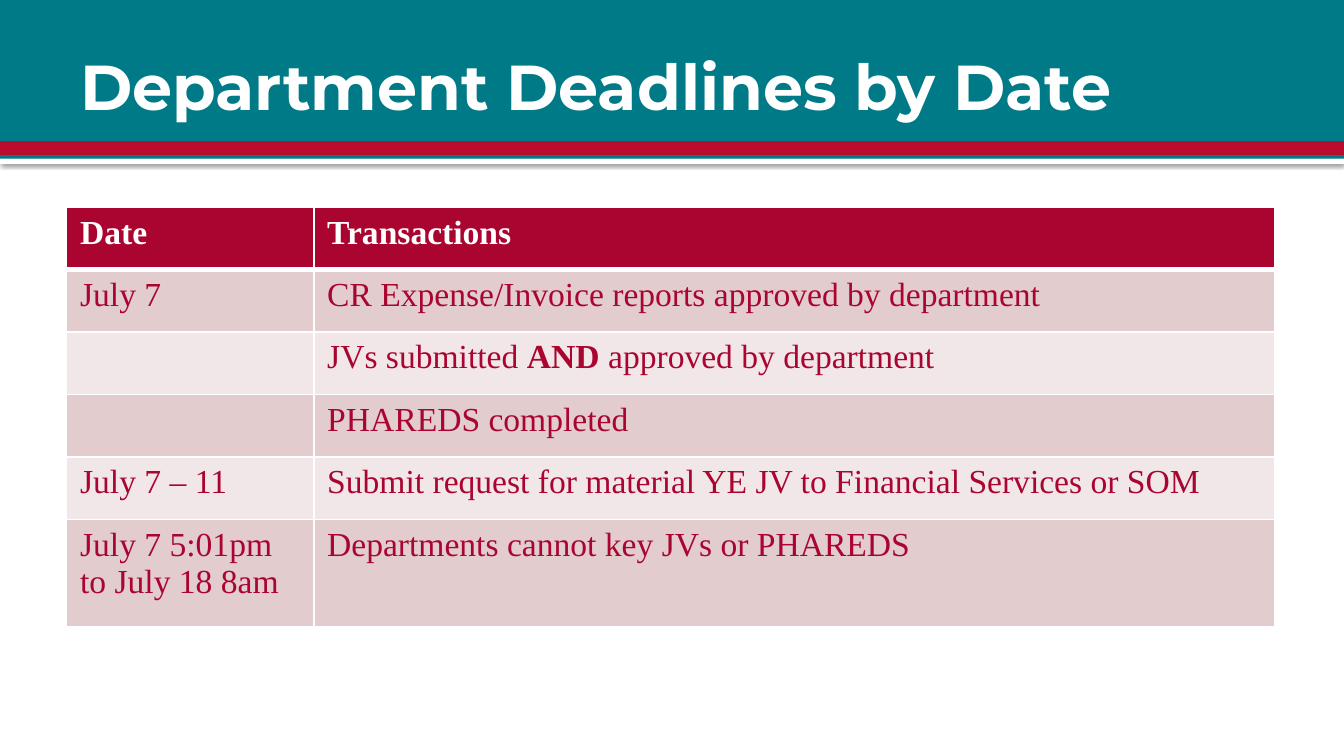
from typing import NamedTuple

from lxml.etree import SubElement
from pptx import Presentation
from pptx.dml.color import RGBColor
from pptx.enum.shapes import MSO_SHAPE as Shape
from pptx.enum.text import MSO_ANCHOR as Anchor, PP_ALIGN as Align
from pptx.oxml import parse_xml
from pptx.oxml.ns import nsdecls, qn
from pptx.util import Cm, Pt

TEAL, RED, CRIMSON, WHITE = "007A86", "BA0C2F", "AA0530", "FFFFFF"
DARK_BAND, LIGHT_BAND = "E2CCCD", "F1E7E8"
SLIDE_WIDTH, SLIDE_HEIGHT = 25.4, 14.29
COLUMN_WIDTHS = (4.67, 18.17)
ROW_HEIGHT, LAST_ROW_HEIGHT = 1.18, 2.03


class Band(NamedTuple):
    top: float
    height: float
    fill: str
    line: str | None = None
    shadow: bool = False


class Deadline(NamedTuple):
    date: str
    before: str
    bold: str = ""
    after: str = ""


BANDS = (
    Band(3.0, 0.1, WHITE, shadow=True),
    Band(0, 3.0, TEAL),
    Band(2.74, 0.13, TEAL, line=RED),
)
DEADLINES = (
    Deadline("July 7", "CR Expense/Invoice reports approved by department"),
    Deadline("", "JVs submitted ", "AND ", "approved by department"),
    Deadline("", "PHAREDS completed"),
    Deadline("July 7 – 11", "Submit request for material YE JV to Financial Services or SOM"),
    Deadline("July 7 5:01pm to July 18 8am", "Departments cannot key JVs or PHAREDS"),
)


def color(value: str) -> RGBColor:
    return RGBColor.from_string(value)


def add_shadow(shape) -> None:
    effects = shape._element.spPr.find(qn("a:effectLst"))
    effects.append(parse_xml(
        f'<a:outerShdw {nsdecls("a")} blurRad="{Pt(2.5)}" dist="{Pt(0.8)}" '
        'dir="5400000" rotWithShape="0"><a:srgbClr val="000000">'
        '<a:alpha val="60000"/></a:srgbClr></a:outerShdw>'))


def draw_band(slide, band: Band) -> None:
    shape = slide.shapes.add_shape(
        Shape.RECTANGLE, 0, Cm(band.top), Cm(SLIDE_WIDTH), Cm(band.height))
    shape.shadow.inherit = False
    shape.fill.solid()
    shape.fill.fore_color.rgb = color(band.fill)
    if band.line:
        shape.line.color.rgb = color(band.line)
        shape.line.width = Pt(3.78)
    else:
        shape.line.fill.background()
    if band.shadow:
        add_shadow(shape)


def format_title(slide) -> None:
    title = slide.shapes.title
    title.left, title.top, title.width, title.height = Cm(1.27), Cm(0.3), Cm(22.86), Cm(2.62)
    frame = title.text_frame
    frame.text = "Department Deadlines by Date"
    frame.word_wrap = True
    frame.vertical_anchor = Anchor.MIDDLE
    frame.margin_left = Cm(0.25)
    frame.margin_right = frame.margin_top = frame.margin_bottom = Cm(0.13)
    paragraph = frame.paragraphs[0]
    paragraph.alignment = Align.LEFT
    font = paragraph.runs[0].font
    font.name, font.size, font.bold = "Montserrat", Pt(34), True
    font.color.rgb = color(WHITE)
    # Bring the title in front of the bands
    slide.shapes._spTree.append(title._element)


def set_borders(cell, top: float, bottom: float) -> None:
    properties = cell._tc.get_or_add_tcPr()
    widths = {"lnL": 1, "lnR": 1, "lnT": top, "lnB": bottom}
    for index, (side, width) in enumerate(widths.items()):
        line = SubElement(properties, qn(f"a:{side}"), w=str(Pt(width)))
        fill = SubElement(line, qn("a:solidFill"))
        SubElement(fill, qn("a:srgbClr"), val=WHITE)
        properties.insert(index, line)


def fill_cell(cell, texts: tuple[str, ...], fill: str, text_color: str, header: bool) -> None:
    """Write the texts as runs; the second run of a body cell is bold."""
    cell.fill.solid()
    cell.fill.fore_color.rgb = color(fill)
    paragraph = cell.text_frame.paragraphs[0]
    paragraph.font.size = Pt(18)
    for index, text in enumerate(texts):
        if text:
            run = paragraph.add_run()
            run.text = text
            run.font.name, run.font.size = "Times New Roman", Pt(18)
            run.font.bold = header or index == 1
            run.font.color.rgb = color(text_color)


def draw_table(slide) -> None:
    rows = (Deadline("Date", "Transactions"), *DEADLINES)
    heights = [ROW_HEIGHT] * len(DEADLINES) + [LAST_ROW_HEIGHT]
    table = slide.shapes.add_table(
        len(rows), len(COLUMN_WIDTHS), Cm(1.26), Cm(3.92),
        Cm(sum(COLUMN_WIDTHS)), Cm(sum(heights))).table
    for column, width in zip(table.columns, COLUMN_WIDTHS):
        column.width = Cm(width)
    for index, (deadline, height) in enumerate(zip(rows, heights)):
        table.rows[index].height = Cm(height)
        header = index == 0
        fill = CRIMSON if header else (LIGHT_BAND, DARK_BAND)[index % 2]
        for column, texts in enumerate(((deadline.date,), deadline[1:])):
            cell = table.cell(index, column)
            fill_cell(cell, texts, fill, WHITE if header else CRIMSON, header)
            set_borders(cell, top=3 if index == 1 else 1, bottom=3 if header else 1)


def main() -> None:
    presentation = Presentation()
    presentation.slide_width, presentation.slide_height = Cm(SLIDE_WIDTH), Cm(SLIDE_HEIGHT)
    slide = presentation.slides.add_slide(presentation.slide_layouts.get_by_name("Title Only"))
    for band in BANDS:
        draw_band(slide, band)
    format_title(slide)
    draw_table(slide)
    presentation.save("out.pptx")


if __name__ == "__main__":
    main()
